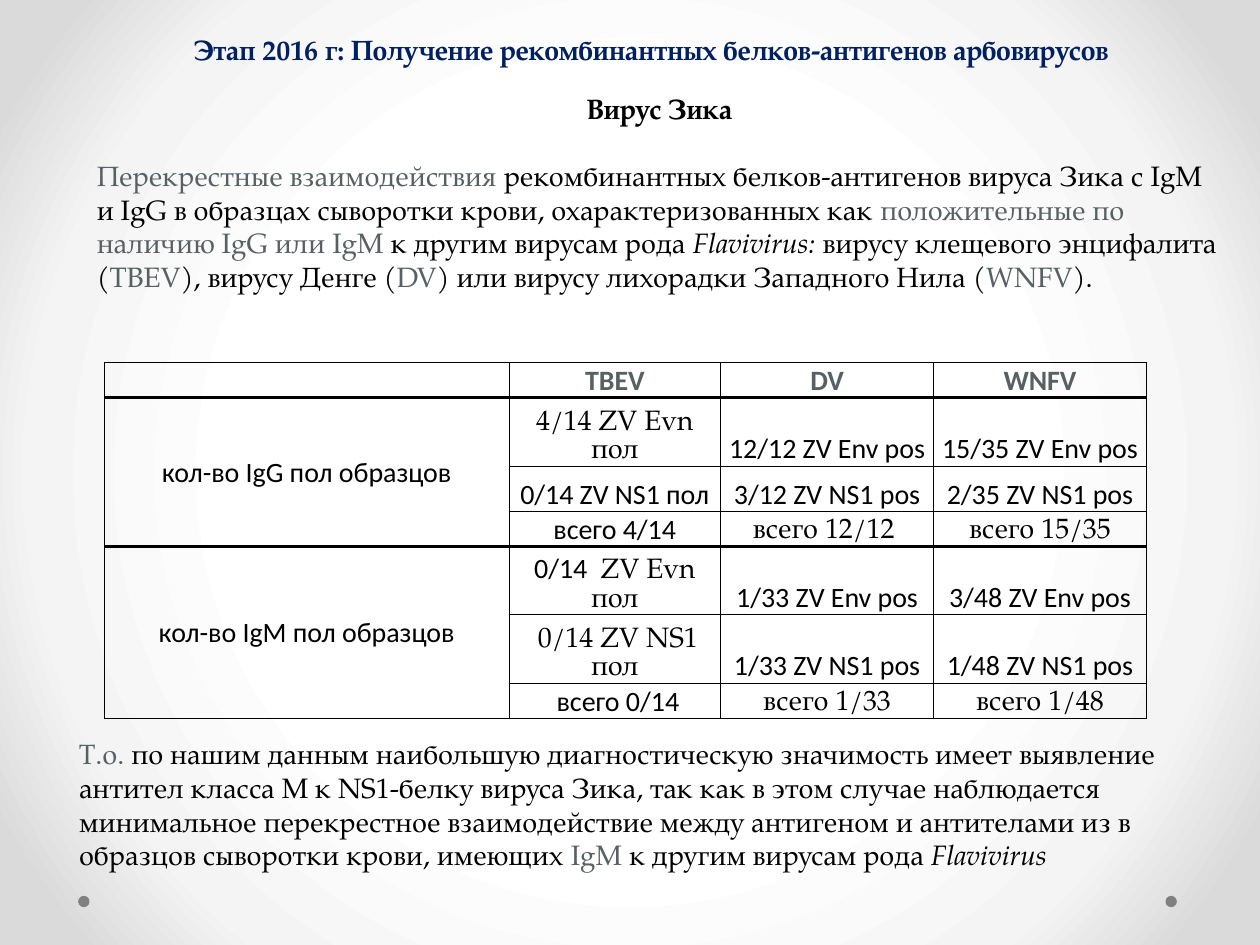
"""Build a slide on cross reactions of Zika virus antigens."""
from pptx import Presentation
from pptx.dml.color import RGBColor as Rgb
from pptx.enum.shapes import MSO_SHAPE as Shape
from pptx.enum.text import MSO_ANCHOR as Anchor, MSO_AUTO_SIZE as Fit, PP_ALIGN as Align
from pptx.oxml import parse_xml
from pptx.oxml.ns import nsdecls
from pptx.util import Inches, Pt

THEME = {
    "serif": "TeX Gyre Pagella", "sans": "Calibri", "size": 16,
    "ink": "000000", "gray": "586064", "navy": "002060", "dot": "808080",
    "glow": [(50, "FFFFFF"), (76, "F4F4F4"), (92, "DADADA")],
    "thin": 0.5, "thick": 2.25,
}
TITLE = [("Этап 2016 г: Получение рекомбинантных белков-антигенов арбовирусов ", "navy bold")]
HEAD = [("Вирус Зика", "bold")]
INTRO = [
    ("Перекрестные взаимодействия ", "gray"),
    ("рекомбинантных белков-антигенов вируса Зика с IgM и IgG в образцах "
     "сыворотки крови, охарактеризованных как ", ""),
    ("положительные по наличию IgG или IgM ", "gray"),
    ("к другим вирусам рода ", ""),
    ("Flavivirus:", "italic"),
    (" вирусу клещевого энцифалита (", ""),
    ("TBEV", "gray"),
    ("), вирусу Денге (", ""),
    ("DV", "gray"),
    (") или вирусу лихорадки Западного Нила (", ""),
    ("WNFV", "gray"),
    (").", ""),
]
OUTRO = [
    ("Т.о. ", "gray"),
    ("по нашим данным наибольшую диагностическую значимость имеет выявление "
     "антител класса M к NS1-белку вируса Зика, так как в этом случае наблюдается "
     "минимальное перекрестное взаимодействие между антигеном и антителами из в "
     "образцов сыворотки крови, имеющих ", ""),
    ("IgM ", "gray"),
    ("к другим вирусам рода ", ""),
    ("Flavivirus", "italic"),
]
TEXTS = [
    ((0.67, 0.68, 9.13, 1.72), [(HEAD, Align.CENTER), (INTRO, Align.LEFT)]),
    ((0.53, 5.8, 9.13, 1.18), [(OUTRO, Align.LEFT)]),
]
ROWS = [
    [[], [("TBEV", "sans gray bold")], [("DV", "sans gray bold")],
     [("WNFV", "sans gray bold")]],
    [[("кол-во IgG пол образцов", "sans")], [("4/14 ZV Evn пол", "")],
     [("12/12 ZV Env pos", "sans")], [("15/35 ZV Env pos", "sans")]],
    [[], [("0/14 ZV NS1 пол", "sans")], [("3/12 ZV NS1 pos", "sans")],
     [("2/35 ZV NS1 pos", "sans")]],
    [[], [(" всего 4/14 ", "sans")], [("всего 12/12 ", "")], [(" всего 15/35 ", "")]],
    [[("кол-во IgM пол образцов", "sans")], [("0/14 ", "sans"), (" ZV Evn пол", "")],
     [("1/33 ZV Env pos", "sans")], [("3/48 ZV Env pos", "sans")]],
    [[], [(" ", "sans"), ("0/14 ZV NS1 пол", "")], [("1/33 ZV NS1 pos", "sans")],
     [("1/48 ZV NS1 pos", "sans")]],
    [[], [(" всего 0/14", "sans")], [("всего 1/33", "")], [("всего 1/48", "")]],
]
GRID = (0.83, 2.88, 8.27, 2.56)
WIDTHS = [3.21, 1.68, 1.69, 1.69]
HEIGHTS = [0.21, 0.21, 0.36, 0.21, 0.21, 0.21, 0.21]
GROUPS = [(1, 3), (4, 6)]
RULES = {1, 4}
DOTS = [0.62, 9.25]


def write(para, runs, align):
    para.alignment = align
    for text, style in runs:
        marks = style.split()
        run = para.add_run()
        run.text = text
        font = run.font
        font.name = THEME["sans" if "sans" in marks else "serif"]
        font.size = Pt(THEME["size"])
        font.bold = "bold" in marks
        font.italic = "italic" in marks
        tone = next((m for m in marks if m in ("gray", "navy")), "ink")
        font.color.rgb = Rgb.from_string(THEME[tone])


def paint(slide):
    stops = "".join(
        f'<a:gs pos="{at * 1000}"><a:srgbClr val="{tone}"/></a:gs>'
        for at, tone in THEME["glow"])
    slide.element.cSld.insert(0, parse_xml(
        f'<p:bg {nsdecls("p", "a")}><p:bgPr><a:gradFill rotWithShape="1">'
        f'<a:gsLst>{stops}</a:gsLst><a:path path="circle">'
        '<a:fillToRect l="50000" t="50000" r="50000" b="50000"/></a:path>'
        '</a:gradFill><a:effectLst/></p:bgPr></p:bg>'))


def frame(cell, row):
    edges = {"L": None, "R": None, "T": row, "B": row + cell.span_height}
    props = cell._tc.get_or_add_tcPr()
    for i, (side, edge) in enumerate(edges.items()):
        width = Pt(THEME["thick" if edge in RULES else "thin"])
        props.insert(i, parse_xml(
            f'<a:ln{side} {nsdecls("a")} w="{width}"><a:solidFill>'
            f'<a:srgbClr val="{THEME["ink"]}"/></a:solidFill></a:ln{side}>'))


def add_grid(slide):
    table = slide.shapes.add_table(len(ROWS), len(WIDTHS), *map(Inches, GRID)).table
    table.first_row = table.horz_banding = False
    for col, width in zip(table.columns, WIDTHS):
        col.width = Inches(width)
    for row, height in zip(table.rows, HEIGHTS):
        row.height = Inches(height)
    for top, end in GROUPS:
        table.cell(top, 0).merge(table.cell(end, 0))
    for r, row in enumerate(ROWS):
        for c, runs in enumerate(row):
            cell = table.cell(r, c)
            cell.fill.background()
            if cell.is_spanned:
                continue
            cell.vertical_anchor = Anchor.BOTTOM if c else Anchor.MIDDLE
            cell.margin_left = cell.margin_right = cell.margin_top = Inches(0.01)
            cell.margin_bottom = 0
            para = cell.text_frame.paragraphs[0]
            para.font.size = Pt(THEME["size"])
            write(para, runs, Align.CENTER)
            frame(cell, r)


def main():
    deck = Presentation()
    deck.slide_width, deck.slide_height = Inches(10), Inches(7.5)
    slide = deck.slides.add_slide(deck.slide_layouts[5])
    paint(slide)
    for left in DOTS:
        dot = slide.shapes.add_shape(
            Shape.OVAL, *map(Inches, (left, 7.11, 0.09, 0.09)))
        dot.shadow.inherit = False
        dot.fill.solid()
        dot.fill.fore_color.rgb = Rgb.from_string(THEME["dot"])
        dot.line.fill.background()
    title = slide.shapes.title
    title.left, title.top, title.width, title.height = map(
        Inches, (0.91, 0.21, 8.58, 0.37))
    title.text_frame.auto_size = Fit.NONE
    title.text_frame.vertical_anchor = Anchor.TOP
    write(title.text_frame.paragraphs[0], TITLE, Align.CENTER)
    for box, paras in TEXTS:
        body = slide.shapes.add_textbox(*map(Inches, box)).text_frame
        body.word_wrap = True
        for i, (runs, align) in enumerate(paras):
            para = body.add_paragraph() if i else body.paragraphs[0]
            para.space_before = Pt(19 if i else 0)
            write(para, runs, align)
    add_grid(slide)
    deck.save("out.pptx")


if __name__ == "__main__":
    main()
